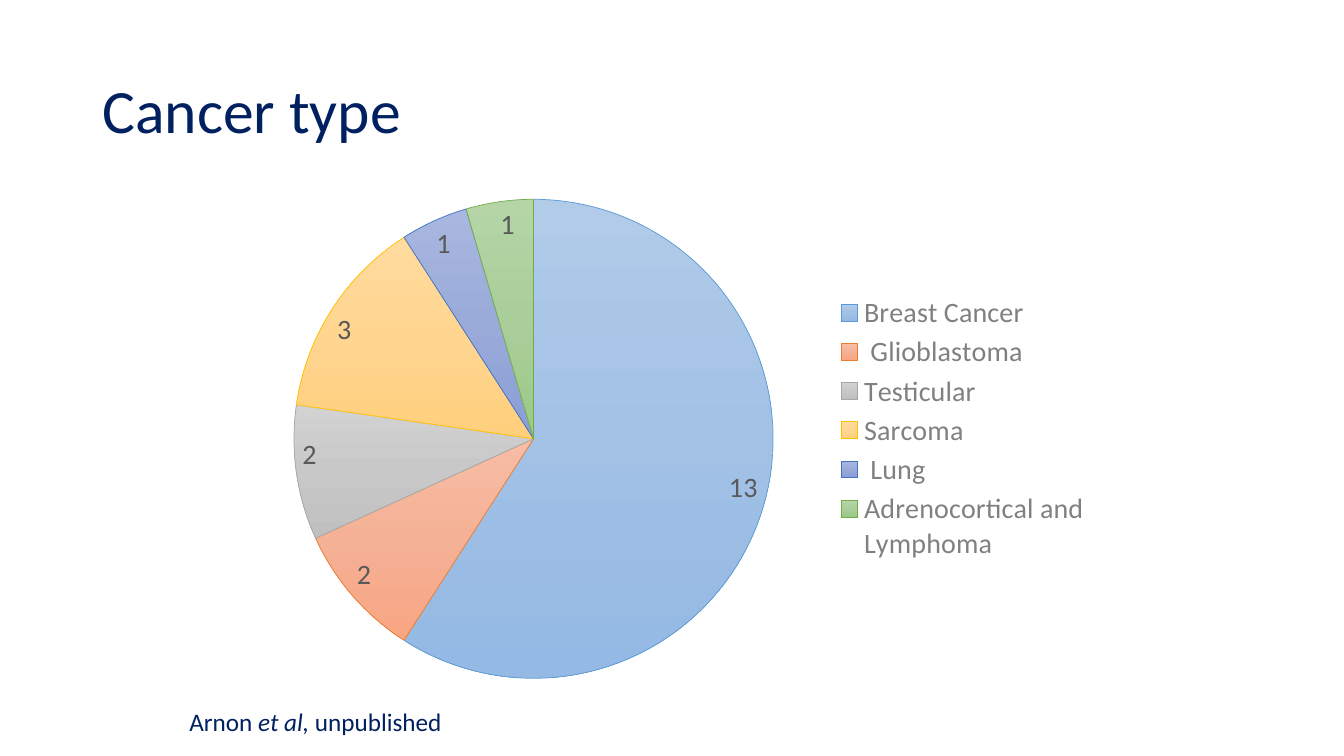
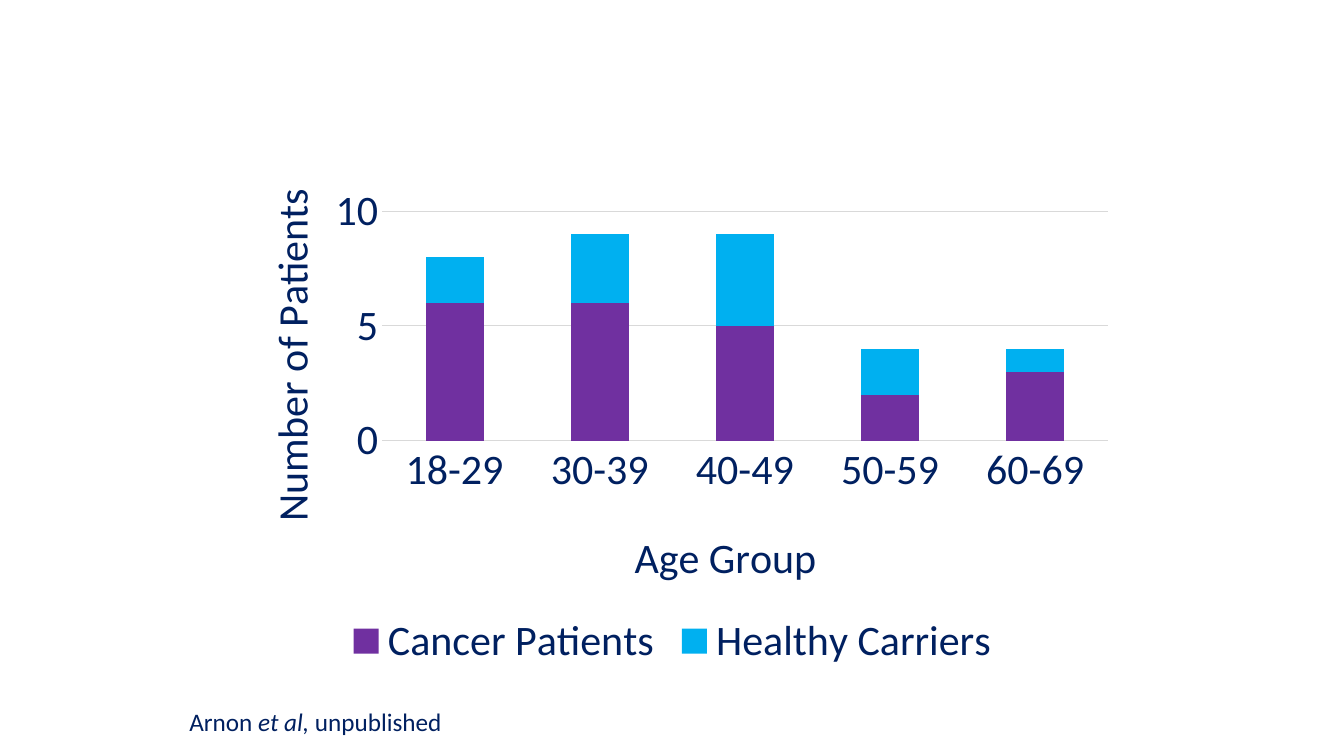
from copy import deepcopy

from lxml.etree import SubElement
from pptx import Presentation
from pptx.chart.data import CategoryChartData
from pptx.dml.color import RGBColor
from pptx.enum.chart import XL_CHART_TYPE as ChartType
from pptx.enum.chart import XL_LABEL_POSITION as LabelPosition
from pptx.enum.chart import XL_LEGEND_POSITION as LegendPosition
from pptx.enum.chart import XL_TICK_MARK as TickMark
from pptx.enum.text import MSO_ANCHOR as Anchor
from pptx.oxml.ns import qn
from pptx.util import Inches, Pt

FONT = "Calibri"
NAVY = RGBColor(0x00, 0x20, 0x60)
LEGEND_GREY = RGBColor(0x80, 0x80, 0x80)
LABEL_GREY = RGBColor(0x59, 0x59, 0x59)
GRID_GREY = RGBColor(0xD9, 0xD9, 0xD9)
PURPLE = RGBColor(0x70, 0x30, 0xA0)
SKY = RGBColor(0x00, 0xB0, 0xF0)

# Category, count, outline, then the gradient from top to bottom
CANCER_TYPES = [
    ("Breast Cancer", 13, "5B9BD5", ("B1CBE9", "A3C1E5", "93B9E4")),
    (" Glioblastoma", 2, "ED7D31", ("F7BDA5", "F5B196", "F8A582")),
    ("Testicular", 2, "A5A5A5", ("D2D2D2", "C8C8C8", "C0C0C0")),
    ("Sarcoma", 3, "FFC000", ("FFDB9E", "FFD590", "FFD07C")),
    (" Lung", 1, "4472C4", ("A8B7DF", "9AABD9", "889ED7")),
    ("Adrenocortical and Lymphoma", 1, "70AD47", ("B5D5A7", "AACE9A", "9CC987")),
]
AGE_GROUPS = ["18-29", "30-39", "40-49", "50-59", "60-69"]
PATIENT_GROUPS = [
    ("Cancer Patients", (6, 6, 5, 2, 3), PURPLE),
    ("Healthy Carriers", (2, 3, 4, 2, 1), SKY),
]


def set_font(font, size, color):
    font.name, font.size, font.bold = FONT, Pt(size), False
    font.color.rgb = color


def set_layout(element, inner=False, **shares):
    """Place a chart part by shares of the chart's size (x, y, w, h)."""
    for old in element.findall(qn("c:layout")):
        element.remove(old)
    layout = element.makeelement(qn("c:layout"))
    element.insert(0 if inner else 1, layout)
    manual = SubElement(layout, qn("c:manualLayout"))
    if inner:
        SubElement(manual, qn("c:layoutTarget")).set("val", "inner")
    for key in ("x", "y"):
        SubElement(manual, qn(f"c:{key}Mode")).set("val", "edge")
    for key, share in shares.items():
        SubElement(manual, qn(f"c:{key}")).set("val", str(share))


class SlideBuilder:
    def __init__(self):
        self.deck = Presentation()
        self.deck.slide_width, self.deck.slide_height = Inches(13.33), Inches(7.5)
        self.page = None

    def new_page(self):
        self.page = self.deck.slides.add_slide(self.deck.slide_layouts[6])

    def place(self, left, top, width, height):
        """Turn percentages of the slide's size into lengths."""
        across, down = self.deck.slide_width / 100, self.deck.slide_height / 100
        return int(left * across), int(top * down), int(width * across), int(height * down)

    def text(self, area, size, spans, anchor=Anchor.TOP):
        box = self.page.shapes.add_textbox(*self.place(*area))
        frame = box.text_frame
        frame.word_wrap = True
        frame.vertical_anchor = anchor
        para = frame.paragraphs[0]
        set_font(para.font, size, NAVY)
        for words, italic in spans:
            span = para.add_run()
            span.text = words
            if italic:
                span.font.italic = True
        return para

    def title(self, words):
        para = self.text((6.9, 5.33, 86.25, 19.33), 44, [(words, False)], Anchor.MIDDLE)
        para.line_spacing = 0.9

    def source_note(self):
        spans = [("Arnon ", False), ("et al, ", True), ("unpublished", False)]
        self.text((13.35, 92.8, 59.03, 5.33), 18, spans)

    def chart(self, kind, area, data, legend_position, size, legend_color):
        chart = self.page.shapes.add_chart(kind, *self.place(*area), data).chart
        chart.has_title = False
        set_font(chart.font, size, legend_color)
        chart.has_legend = True
        chart.legend.position = legend_position
        chart.legend.include_in_layout = False
        set_font(chart.legend.font, size, legend_color)
        return chart

    def pie(self, area, slices):
        data = CategoryChartData()
        data.categories = [name for name, *_ in slices]
        data.add_series("Series 1", [count for _, count, *_ in slices])
        chart = self.chart(ChartType.PIE, area, data, LegendPosition.RIGHT, 20, LEGEND_GREY)
        set_layout(chart._chartSpace.chart.plotArea, True, x=0.06, y=0.08, w=0.56, h=0.89)
        set_layout(chart.legend._element, x=0.69, y=0.25, w=0.3, h=0.51)

        plot = chart.plots[0]
        plot.vary_by_categories = True
        plot.has_data_labels = True
        labels = plot.data_labels
        labels.show_value, labels.show_percentage = True, False
        labels.position = LabelPosition.INSIDE_END
        set_font(labels.font, 20, LABEL_GREY)

        for index, (_, _, outline, shades) in enumerate(slices):
            look = plot.series[0].points[index].format
            look.line.color.rgb = RGBColor.from_string(outline)
            look.line.width = Pt(0.5)
            look.fill.gradient()
            look.fill.gradient_angle = 270
            stop_list = list(chart._chartSpace.iter(qn("a:gsLst")))[index]
            stop_list.insert(1, deepcopy(stop_list[0]))
            for step, (stop, shade) in enumerate(zip(look.fill.gradient_stops, shades)):
                stop.position = step / 2
                stop.color.rgb = RGBColor.from_string(shade)

    def axis(self, axis, words, x, y):
        axis.major_tick_mark = axis.minor_tick_mark = TickMark.NONE
        set_font(axis.tick_labels.font, 30, NAVY)
        frame = axis.axis_title.text_frame
        frame.text = words
        set_font(frame.paragraphs[0].font, 30, NAVY)
        set_layout(axis.axis_title._element, x=x, y=y)

    def stacked_columns(self, area, categories, groups):
        data = CategoryChartData()
        data.categories = categories
        for name, counts, _ in groups:
            data.add_series(name, counts)
        chart = self.chart(ChartType.COLUMN_STACKED, area, data, LegendPosition.BOTTOM, 30, NAVY)
        set_layout(chart._chartSpace.chart.plotArea, True, x=0.18, y=0.07, w=0.8, h=0.46)

        plot = chart.plots[0]
        plot.gap_width, plot.overlap = 150, 100
        for series, (_, _, color) in zip(plot.series, groups):
            series.format.fill.solid()
            series.format.fill.fore_color.rgb = color

        ages, counts = chart.category_axis, chart.value_axis
        self.axis(ages, "Age Group", 0.45, 0.69)
        self.axis(counts, "Number of Patients", 0.04, 0.01)
        counts.minimum_scale, counts.maximum_scale, counts.major_unit = 0, 10, 5
        counts.format.line.fill.background()
        for line in (ages.format.line, counts.major_gridlines.format.line):
            line.color.rgb = GRID_GREY
            line.width = Pt(0.75)


def main():
    builder = SlideBuilder()

    builder.new_page()
    builder.title("Cancer type")
    builder.pie((18, 20.67, 63.83, 71.2), CANCER_TYPES)
    builder.source_note()

    builder.new_page()
    builder.stacked_columns((16.28, 23.33, 67.5, 66), AGE_GROUPS, PATIENT_GROUPS)
    builder.source_note()

    builder.deck.save("out.pptx")


if __name__ == "__main__":
    main()
